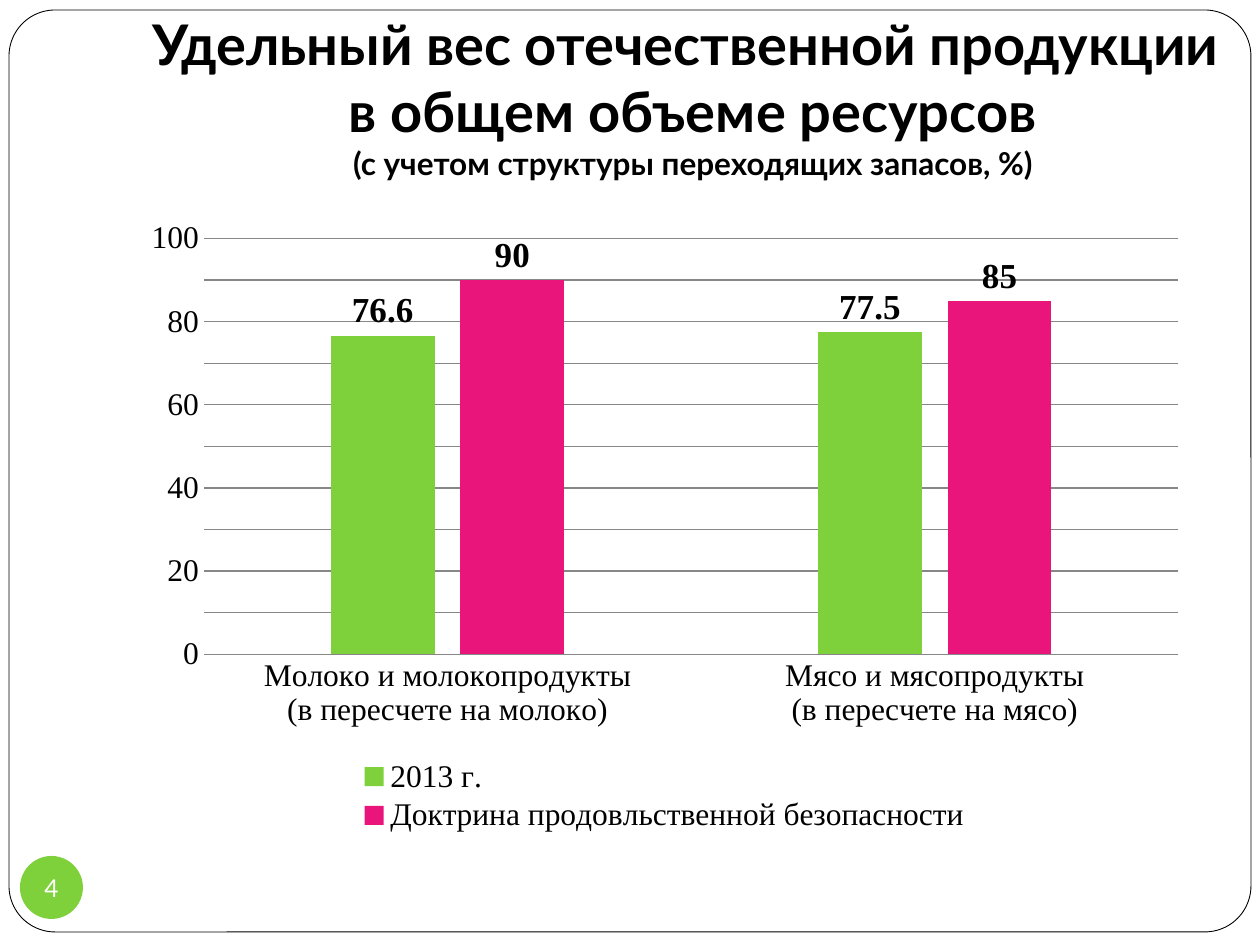
from copy import deepcopy
from dataclasses import dataclass

from lxml.etree import SubElement
from pptx import Presentation
from pptx.chart.data import CategoryChartData
from pptx.dml.color import RGBColor
from pptx.enum.chart import (
    XL_CHART_TYPE as ChartType,
    XL_LABEL_POSITION as LabelPosition,
    XL_LEGEND_POSITION as LegendPosition,
    XL_TICK_MARK as TickMark,
)
from pptx.enum.shapes import MSO_SHAPE as Preset
from pptx.enum.text import MSO_ANCHOR as Anchor, MSO_AUTO_SIZE as AutoSize, PP_ALIGN as Align
from pptx.oxml.ns import qn
from pptx.util import Pt

EMU_PER_PX = 914400 / 126


@dataclass(frozen=True)
class Theme:
    white: RGBColor = RGBColor(0xFF, 0xFF, 0xFF)
    black: RGBColor = RGBColor(0, 0, 0)
    grid: RGBColor = RGBColor(0x87, 0x87, 0x87)
    green: RGBColor = RGBColor(0x7F, 0xD1, 0x3B)
    pink: RGBColor = RGBColor(0xEA, 0x15, 0x7A)
    heading_font: str = "Lato"
    chart_font: str = "Times New Roman"
    title_size: int = 32
    subtitle_size: int = 18
    chart_size: int = 18
    label_size: int = 20
    number_size: int = 14


THEME = Theme()


def px(length):
    return round(length * EMU_PER_PX)


def apply(target, values):
    for name, value in values.items():
        setattr(target, name, value)


def place(shape, left, top, width, height):
    apply(shape, {"left": px(left), "top": px(top), "width": px(width), "height": px(height)})


def style_font(font, name, size, color, bold=False):
    apply(font, {"name": name, "size": Pt(size), "bold": bold})
    font.color.rgb = color


def add_filled_shape(slide, preset, box, fill, line=None):
    shape = slide.shapes.add_shape(preset, *map(px, box))
    shape.shadow.inherit = False
    shape.fill.solid()
    shape.fill.fore_color.rgb = fill
    if line is None:
        shape.line.fill.background()
    else:
        shape.line.color.rgb = line
        shape.line.width = Pt(0.5)
    return shape


def add_frame(slide):
    frame = add_filled_shape(slide, Preset.ROUNDED_RECTANGLE, (9, 10, 1242, 922), THEME.white, THEME.black)
    frame.adjustments[0] = 0.05
    frame.element.getparent().insert(2, frame.element)


def fill_title(slide, lines):
    title = slide.shapes.title
    place(title, 126, 38, 1134, 157)
    apply(title.text_frame, {
        "word_wrap": True, "auto_size": AutoSize.NONE, "vertical_anchor": Anchor.BOTTOM,
        "margin_left": px(13), "margin_right": px(13), "margin_top": px(6), "margin_bottom": px(13),
    })
    paragraph = title.text_frame.paragraphs[0]
    paragraph.alignment = Align.CENTER
    for index, (text, size) in enumerate(lines):
        if index:
            paragraph.add_line_break()
        run = paragraph.add_run()
        run.text = text
        style_font(run.font, THEME.heading_font, size, THEME.black, True)


def add_number_badge(slide, number):
    badge = add_filled_shape(slide, Preset.OVAL, (20, 856, 63, 63), THEME.green)
    apply(badge.text_frame, {
        "word_wrap": False, "vertical_anchor": Anchor.MIDDLE,
        "margin_left": 0, "margin_right": 0, "margin_top": 0, "margin_bottom": 0,
    })
    paragraph = badge.text_frame.paragraphs[0]
    paragraph.alignment = Align.CENTER
    run = paragraph.add_run()
    run.text = number
    style_font(run.font, THEME.heading_font, THEME.number_size, THEME.white)


def set_layout(parent, position, inner=False):
    for old in parent.findall(qn("c:layout")):
        parent.remove(old)
    layout = SubElement(parent, qn("c:layout"))
    manual = SubElement(layout, qn("c:manualLayout"))
    values = {"layoutTarget": "inner"} if inner else {}
    values.update({"xMode": "edge", "yMode": "edge"})
    values.update(zip("xywh", position))
    for name, value in values.items():
        SubElement(manual, qn(f"c:{name}")).set("val", str(value))
    parent.insert(0 if inner else 1, layout)


def style_axes(chart):
    value_axis, category_axis = chart.value_axis, chart.category_axis
    apply(value_axis, {
        "minimum_scale": 0, "maximum_scale": 100, "major_unit": 20, "minor_unit": 10,
        "has_major_gridlines": True, "has_minor_gridlines": True,
    })
    for axis in (value_axis, category_axis):
        apply(axis, {"major_tick_mark": TickMark.NONE, "minor_tick_mark": TickMark.NONE})
    value_axis.format.line.fill.background()
    for part in (value_axis.major_gridlines, category_axis):
        part.format.line.color.rgb = THEME.grid
        part.format.line.width = Pt(0.75)
    major, minor = (next(chart.element.iter(qn(f"c:{kind}Gridlines"))) for kind in ("major", "minor"))
    minor.append(deepcopy(major.find(qn("c:spPr"))))


def style_series(series, color):
    series.format.fill.solid()
    series.format.fill.fore_color.rgb = color
    labels = series.data_labels
    apply(labels, {"show_value": True, "position": LabelPosition.OUTSIDE_END})
    style_font(labels.font, THEME.chart_font, THEME.label_size, THEME.black, True)


def add_column_chart(slide, categories, series_rows):
    data = CategoryChartData()
    data.categories = categories
    for name, values, _ in series_rows:
        data.add_series(name, values)
    box = map(px, (129, 207, 1071, 630))
    chart = slide.shapes.add_chart(ChartType.COLUMN_CLUSTERED, *box, data).chart
    apply(chart, {"has_title": False, "has_legend": True})
    style_font(chart.font, THEME.chart_font, THEME.chart_size, THEME.black)
    apply(chart.legend, {"position": LegendPosition.BOTTOM, "include_in_layout": False})
    plot = chart.plots[0]
    apply(plot, {"gap_width": 245, "overlap": -25, "vary_by_categories": False})
    style_axes(chart)
    for series, (_, _, color) in zip(plot.series, series_rows):
        style_series(series, color)
    chart_element = chart.element.find(qn("c:chart"))
    set_layout(chart_element.find(qn("c:plotArea")), (0.07, 0.05, 0.91, 0.66), inner=True)
    set_layout(chart_element.find(qn("c:legend")), (0.21, 0.87, 0.58, 0.13))


def main():
    presentation = Presentation()
    apply(presentation, {"slide_width": px(1260), "slide_height": px(945)})
    slide = presentation.slides.add_slide(presentation.slide_layouts[5])
    add_frame(slide)
    fill_title(slide, [
        ("Удельный вес отечественной продукции ", THEME.title_size),
        ("в общем объеме ресурсов", THEME.title_size),
        ("(с учетом структуры переходящих запасов, %)", THEME.subtitle_size),
    ])
    add_number_badge(slide, "4")
    add_column_chart(
        slide,
        ["Молоко и молокопродукты\n(в пересчете на молоко)", "Мясо и мясопродукты\n(в пересчете на мясо)"],
        [
            ("2013 г.", (76.6, 77.5), THEME.green),
            ("Доктрина продовльственной безопасности", (90, 85), THEME.pink),
        ],
    )
    presentation.save("out.pptx")


if __name__ == "__main__":
    main()
